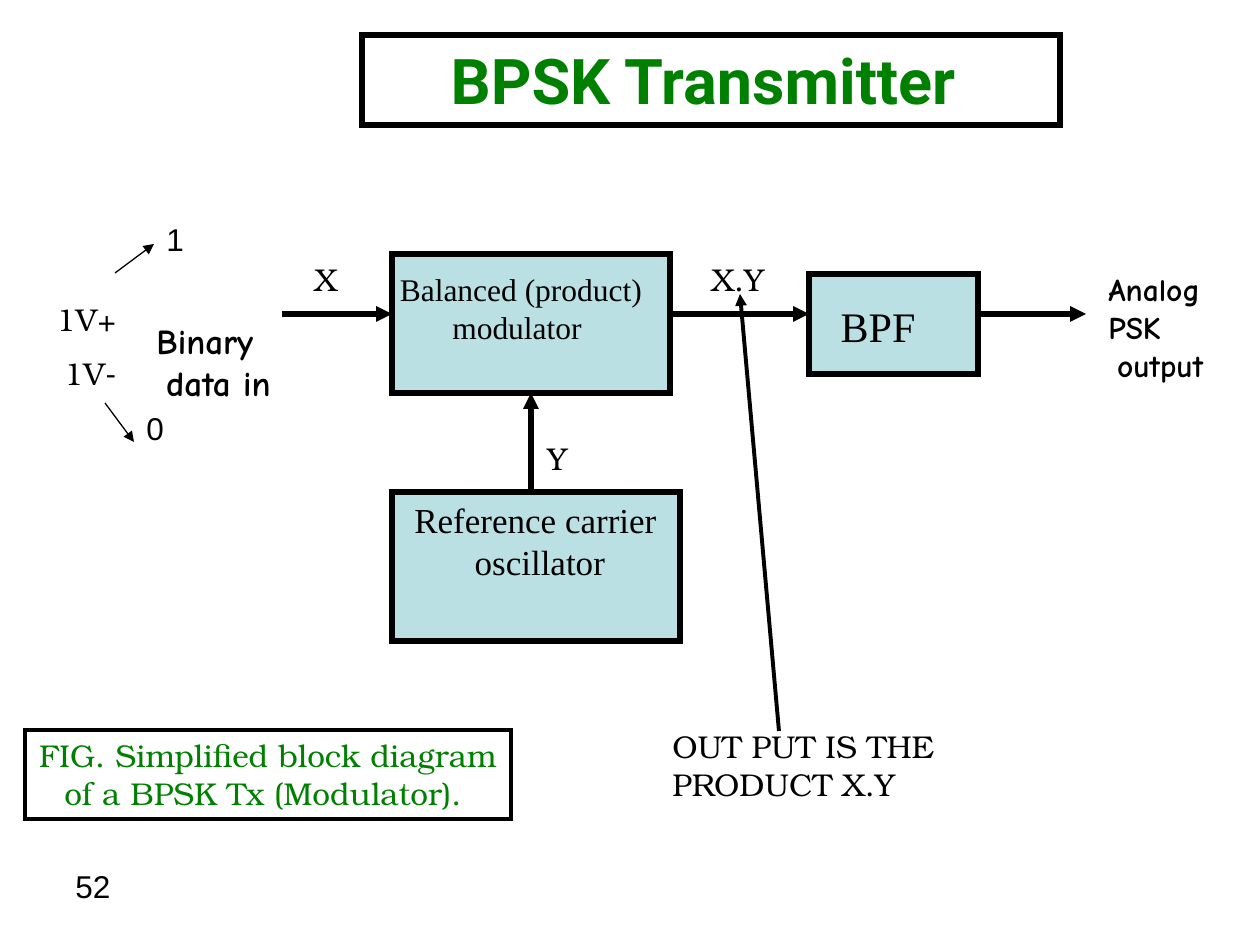
"""Build the BPSK transmitter block diagram slide."""
from dataclasses import dataclass
from lxml import etree
from pptx import Presentation
from pptx.dml.color import RGBColor
from pptx.enum.shapes import MSO_CONNECTOR, MSO_SHAPE
from pptx.enum.text import MSO_ANCHOR, PP_ALIGN
from pptx.oxml.ns import qn
from pptx.util import Emu, Pt

LEFT, CENTER, RIGHT = PP_ALIGN.LEFT, PP_ALIGN.CENTER, PP_ALIGN.RIGHT
TOP = MSO_ANCHOR.TOP
RECTANGLE, STRAIGHT = MSO_SHAPE.RECTANGLE, MSO_CONNECTOR.STRAIGHT
BOTTOM_SITE = 2


@dataclass(frozen=True)
class Theme:
    ink: RGBColor = RGBColor(0, 0, 0)
    green: RGBColor = RGBColor(0, 128, 0)
    block: RGBColor = RGBColor(0xBB, 0xE0, 0xE3)
    title: int = 36
    large: int = 24
    medium: int = 20
    body: int = 18
    thick: float = 3
    medium_line: float = 2.25
    thin: float = 0.75
    sans: str = "Arial"
    heading: str = "Roboto"
    serif: str = "Times New Roman"
    label: str = "TeX Gyre Bonum"
    comic: str = "Comic Neue"


theme = Theme()


def px(length):
    return Emu(round(length * 914400 / 126))


def write(shape, lines, font, size, color=theme.ink, align=LEFT, bold=False, rtl=False):
    frame = shape.text_frame
    frame.word_wrap = True
    frame.vertical_anchor = TOP
    frame.text = "\n".join(lines)
    for index, paragraph in enumerate(frame.paragraphs):
        paragraph.alignment = align
        paragraph.font.name = font
        paragraph.font.size = Pt(size)
        paragraph.font.bold = bold
        paragraph.font.color.rgb = color
        if index:
            paragraph.space_before = Pt(size / 2)
        if rtl:
            paragraph._p.get_or_add_pPr().set("rtl", "1")


presentation = Presentation()
presentation.slide_width, presentation.slide_height = px(1260), px(945)
slide = presentation.slides.add_slide(presentation.slide_layouts[6])

boxes = {}
for name, bounds, fill, width in (
    ("title", (362, 35, 698, 90), None, theme.thick),
    ("modulator", (392, 254, 278, 139), theme.block, theme.thick),
    ("oscillator", (392, 492, 288, 149), theme.block, theme.thick),
    ("filter", (809, 274, 169, 100), theme.block, theme.thick),
    ("caption", (25, 730, 486, 89), None, theme.medium_line),
):
    shape = slide.shapes.add_shape(RECTANGLE, *map(px, bounds))
    shape.shadow.inherit = False
    shape.line.color.rgb = theme.ink
    shape.line.width = Pt(width)
    etree.SubElement(shape.line._get_or_add_ln(), qn("a:miter"), lim="800000")
    if fill is None:
        shape.fill.background()
    else:
        shape.fill.solid()
        shape.fill.fore_color.rgb = fill
    boxes[name] = shape

write(boxes["title"], ["BPSK Transmitter "], theme.heading, theme.title, theme.green, CENTER, True)
write(boxes["caption"], ["FIG. Simplified block diagram of a BPSK Tx (Modulator). "],
      theme.label, theme.body, theme.green, CENTER)

for start, end, width, target in (
    ((779, 731), (740, 294), theme.medium_line, None),
    ((282, 314), (392, 314), theme.thick, None),
    ((670, 314), (809, 314), theme.thick, None),
    ((978, 314), (1086, 314), theme.thick, None),
    ((531, 492), (531, 393), theme.thick, "modulator"),
    ((115, 273), (154, 244), theme.thin, None),
    ((105, 403), (134, 442), theme.thin, None),
):
    arrow = slide.shapes.add_connector(STRAIGHT, *map(px, start + end))
    if target:
        arrow.end_connect(boxes[target], BOTTOM_SITE)
    arrow.line.color.rgb = theme.ink
    arrow.line.width = Pt(width)
    etree.SubElement(arrow.line._get_or_add_ln(), qn("a:tailEnd"), type="triangle")
    etree.SubElement(arrow._element.spPr, qn("a:effectLst"))

for bounds, text, font, size, align, bold, rtl in (
    ((352, 264, 338, 152), "Balanced (product) modulator ", theme.serif, theme.body, CENTER, False, False),
    ((396, 492, 279, 97), "Reference carrier oscillator ", theme.serif, theme.medium, CENTER, False, True),
    ((819, 294, 118, 63), "BPF", theme.serif, theme.large, CENTER, False, False),
    ((660, 721, 328, 89), "OUT PUT IS THE PRODUCT X.Y", theme.label, theme.body, LEFT, False, False),
    ((1096, 264, 139, 126), "Analog PSK output ", theme.comic, theme.body, LEFT, True, True),
    ((144, 313, 159, 97), "Binary data in ", theme.comic, theme.medium, LEFT, True, True),
    ((302, 254, 59, 50), "X", theme.label, theme.body, LEFT, False, False),
    ((535, 433, 51, 50), "Y", theme.label, theme.body, LEFT, False, False),
    ((699, 254, 89, 50), "X.Y", theme.label, theme.body, LEFT, False, False),
    ((154, 214, 49, 50), "1", theme.sans, theme.body, LEFT, False, False),
    ((134, 403, 49, 50), "0", theme.sans, theme.body, LEFT, False, False),
    ((63, 861, 294, 66), "52", theme.sans, theme.body, LEFT, False, False),
):
    write(slide.shapes.add_textbox(*map(px, bounds)), [text], font, size,
          align=align, bold=bold, rtl=rtl)

voltages = slide.shapes.add_textbox(*map(px, (44, 294, 110, 107)))
write(voltages, ["+1V", "-1V"], theme.label, theme.body, align=RIGHT, rtl=True)
voltages.text_frame.margin_left = px(4)
voltages.text_frame.margin_right = px(38)

presentation.save("out.pptx")
